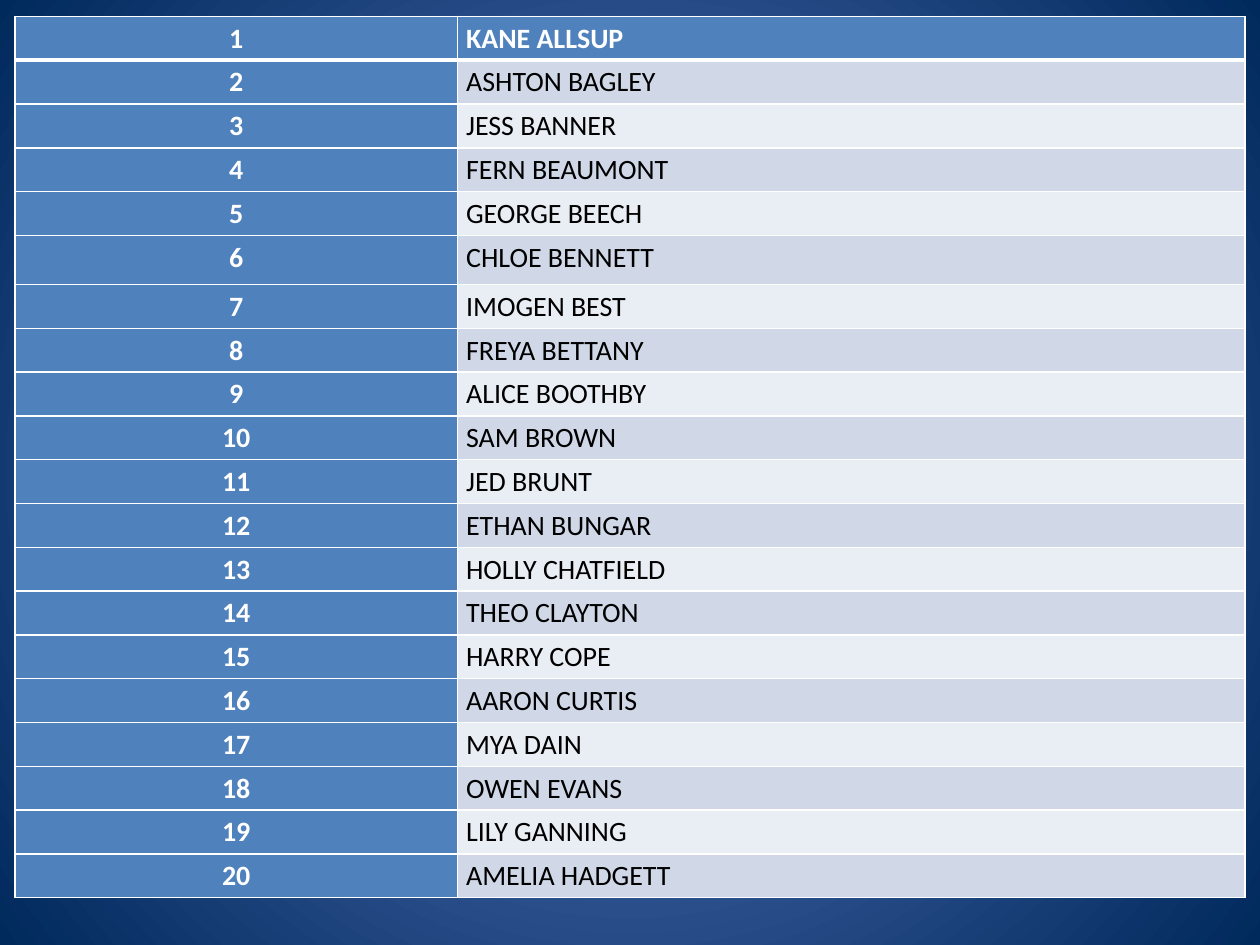
from lxml.etree import SubElement
from pptx import Presentation
from pptx.dml.color import RGBColor
from pptx.enum.text import PP_ALIGN
from pptx.oxml.ns import qn
from pptx.util import Inches, Pt

THEME = {
    "glow": "5E7CC5",
    "navy": "00295C",
    "blue": "4F81BD",
    "bands": ("E9EDF4", "D0D8E8"),
    "white": "FFFFFF",
    "black": "000000",
    "font": "Calibri",
    "size": 16,
    "line": 1,
    "header_line": 3,
}
NAMES = [
    "KANE ALLSUP", "ASHTON BAGLEY", "JESS BANNER", "FERN BEAUMONT",
    "GEORGE BEECH", "CHLOE BENNETT", "IMOGEN BEST", "FREYA BETTANY",
    "ALICE BOOTHBY", "SAM BROWN", "JED BRUNT", "ETHAN BUNGAR",
    "HOLLY CHATFIELD", "THEO CLAYTON", "HARRY COPE", "AARON CURTIS",
    "MYA DAIN", "OWEN EVANS", "LILY GANNING", "AMELIA HADGETT",
]
COLUMN_WIDTHS = (3.51, 6.25)
TABLE_HEIGHT = 7
TALL_ROW, TALL_HEIGHT = 5, 0.39
ROW_HEIGHT = (TABLE_HEIGHT - TALL_HEIGHT) / (len(NAMES) - 1)
CELL_FORMAT = {
    "margin_left": Inches(0.07),
    "margin_right": Inches(0.07),
    "margin_top": 0,
    "margin_bottom": 0,
}


def add_borders(cell, widths):
    """Draw white borders; widths maps each side (L, R, T, B) to points."""
    properties = cell._tc.get_or_add_tcPr()
    for side, width in widths.items():
        border = SubElement(properties, qn(f"a:ln{side}"), w=str(Pt(width)))
        fill = SubElement(border, qn("a:solidFill"))
        SubElement(fill, qn("a:srgbClr"), val=THEME["white"])


def fill_cell(cell, text, fill, color, bold, align, space_after):
    for attribute, value in CELL_FORMAT.items():
        setattr(cell, attribute, value)
    cell.fill.solid()
    cell.fill.fore_color.rgb = RGBColor.from_string(fill)
    paragraph = cell.text_frame.paragraphs[0]
    paragraph_format = {"alignment": align, "line_spacing": 1.15,
                        "space_after": Pt(space_after)}
    for attribute, value in paragraph_format.items():
        setattr(paragraph, attribute, value)
    run = paragraph.add_run()
    run.text = text
    font_format = {"name": THEME["font"], "size": Pt(THEME["size"]), "bold": bold}
    for attribute, value in font_format.items():
        setattr(run.font, attribute, value)
    run.font.color.rgb = RGBColor.from_string(color)


presentation = Presentation()
presentation.slide_width = Inches(10)
presentation.slide_height = Inches(7.5)
slide = presentation.slides.add_slide(presentation.slide_layouts[6])

# Radial background, light in the middle
background = slide.background.fill
background.gradient()
for stop, color in zip(background.gradient_stops, (THEME["glow"], THEME["navy"])):
    stop.color.rgb = RGBColor.from_string(color)
gradient = slide.element.find(f".//{qn('a:gradFill')}")
gradient.remove(gradient.find(qn("a:lin")))
radial = SubElement(gradient, qn("a:path"), path="circle")
SubElement(radial, qn("a:fillToRect"), l="50000", t="50000", r="50000", b="50000")

# Numbered list of names
roster = slide.shapes.add_table(
    len(NAMES), len(COLUMN_WIDTHS), Inches(0.12), Inches(0.13),
    Inches(sum(COLUMN_WIDTHS)), Inches(TABLE_HEIGHT),
).table
roster.first_col = True
for column, width in zip(roster.columns, COLUMN_WIDTHS):
    column.width = Inches(width)

for index, name in enumerate(NAMES):
    roster.rows[index].height = Inches(TALL_HEIGHT if index == TALL_ROW else ROW_HEIGHT)
    number_cell, name_cell = roster.cell(index, 0), roster.cell(index, 1)
    is_header = index == 0
    widths = dict.fromkeys("LRTB", THEME["line"])
    if is_header:
        widths["B"] = THEME["header_line"]
    elif index == 1:
        widths["T"] = THEME["header_line"]
    for cell in (number_cell, name_cell):
        add_borders(cell, widths)
    fill_cell(number_cell, str(index + 1), THEME["blue"], THEME["white"],
              True, PP_ALIGN.CENTER, 0)
    fill_cell(name_cell, name,
              THEME["blue"] if is_header else THEME["bands"][index % 2],
              THEME["white"] if is_header else THEME["black"],
              is_header, PP_ALIGN.LEFT, 10)

presentation.save("out.pptx")
